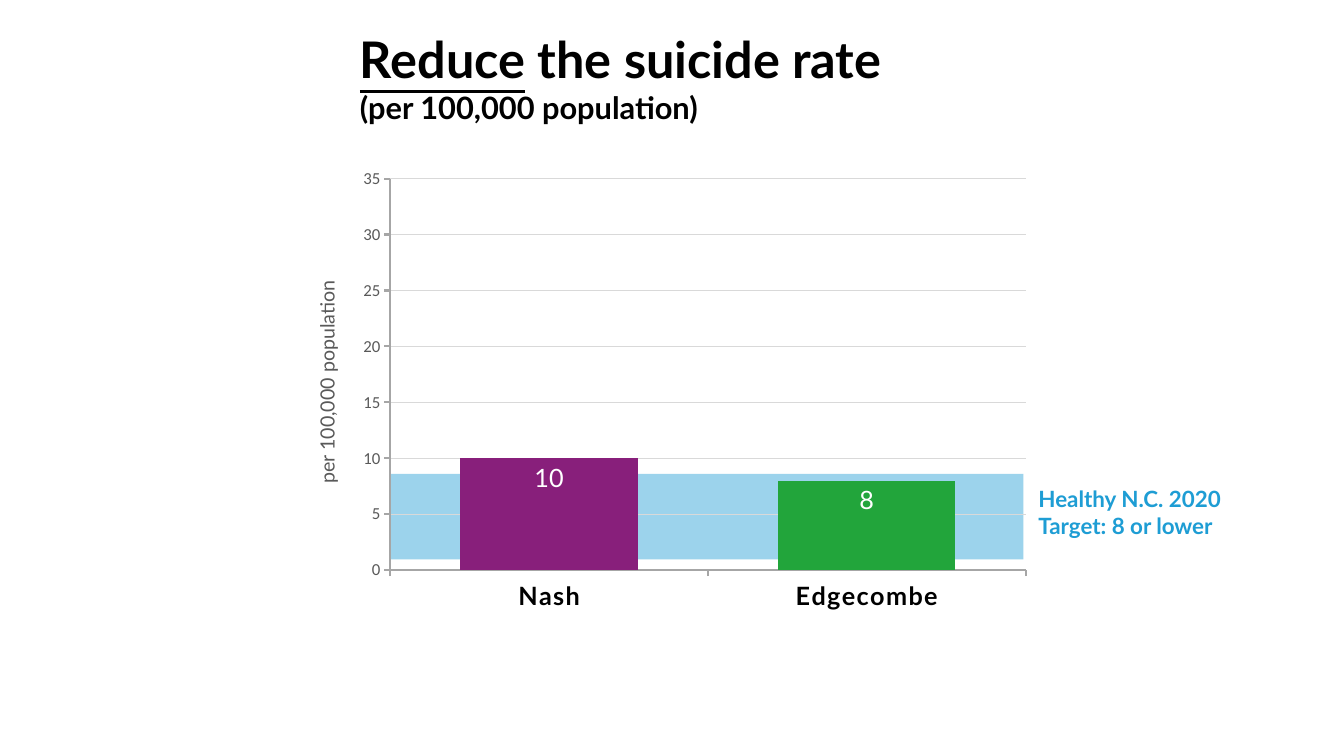
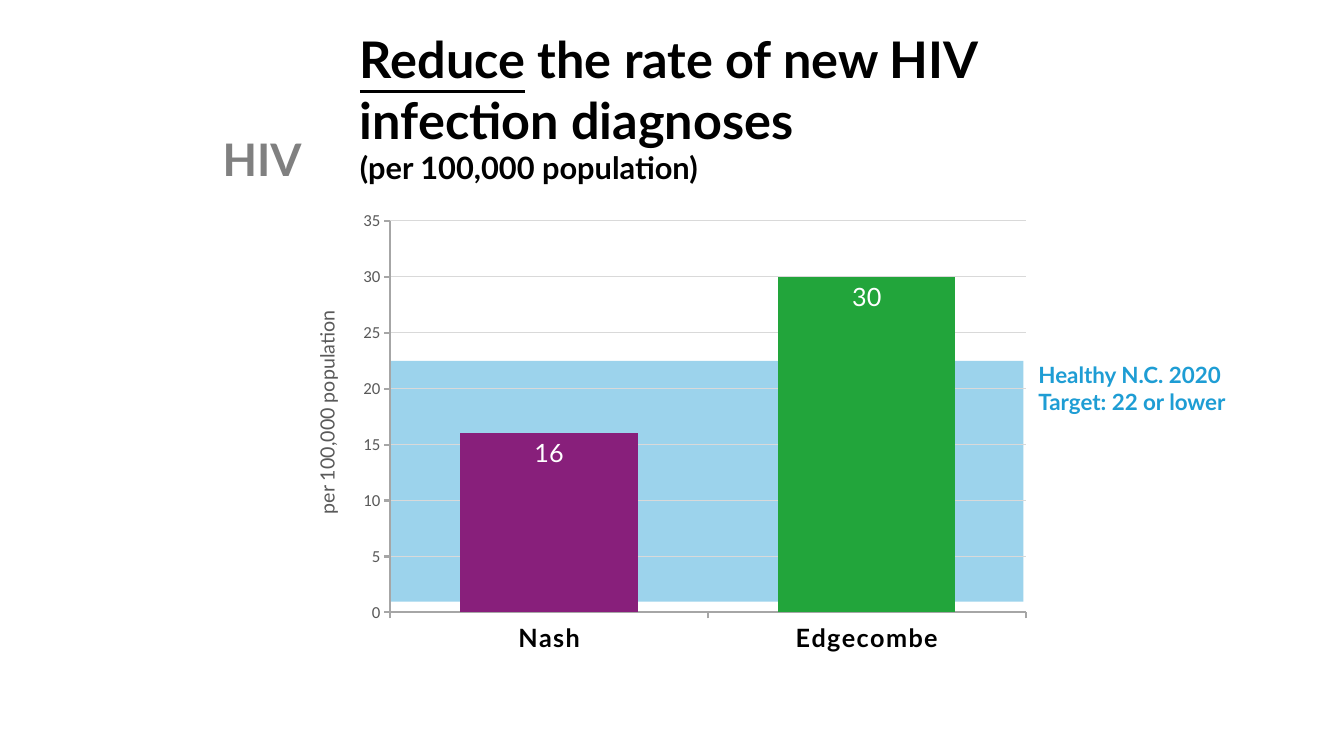
from dataclasses import dataclass

from lxml import etree
from pptx import Presentation
from pptx.chart.axis import CategoryAxis, ValueAxis
from pptx.chart.chart import Chart
from pptx.chart.data import CategoryChartData
from pptx.dml.color import RGBColor
from pptx.enum.chart import XL_CHART_TYPE, XL_LABEL_POSITION
from pptx.enum.shapes import MSO_SHAPE
from pptx.enum.text import MSO_ANCHOR, PP_ALIGN
from pptx.oxml import parse_xml
from pptx.oxml.ns import nsdecls, qn
from pptx.slide import Slide
from pptx.text.text import Font, TextFrame
from pptx.util import Emu, Pt

STACKED = XL_CHART_TYPE.COLUMN_STACKED
INSIDE_END = XL_LABEL_POSITION.INSIDE_END
RECTANGLE = MSO_SHAPE.RECTANGLE
TOP = MSO_ANCHOR.TOP
LEFT = PP_ALIGN.LEFT
CENTER = PP_ALIGN.CENTER

TITLE_ONLY = 5
PX_PER_INCH = 100
COUNTIES = ("Nash", "Edgecombe")
UNIT = "per 100,000 population"


def px(length: int) -> Emu:
    return Emu(length * 914400 // PX_PER_INCH)


@dataclass(frozen=True)
class TextStyle:
    size: float
    color: str
    bold: bool = False
    face: str = "Lato"


@dataclass(frozen=True)
class Theme:
    heading: TextStyle = TextStyle(36, "000000", True)
    subheading: TextStyle = TextStyle(22, "000000", True)
    topic: TextStyle = TextStyle(32, "808080", True)
    target: TextStyle = TextStyle(16, "1E9DD4", True)
    unit: TextStyle = TextStyle(14, "595959")
    county: TextStyle = TextStyle(18, "000000", True)
    scale: TextStyle = TextStyle(12, "595959", face="Calibri")
    value: TextStyle = TextStyle(18, "FFFFFF")
    chart: TextStyle = TextStyle(10, "000000", face="Calibri")
    band: str = "1E9DD4"
    band_opacity: int = 44
    axis: str = "A6A6A6"
    grid: str = "D9D9D9"
    bars: tuple[str, ...] = ("881F7B", "22A53B")


@dataclass(frozen=True)
class Box:
    left: int
    top: int
    width: int
    height: int

    def emu(self) -> tuple[Emu, Emu, Emu, Emu]:
        return px(self.left), px(self.top), px(self.width), px(self.height)


@dataclass(frozen=True)
class Indicator:
    goal: tuple[str, ...]
    rates: tuple[int, ...]
    target: str
    title_height: int
    chart_top: int
    band_height: int
    target_top: int
    unit_top: int
    topic: str = ""


THEME = Theme()
INDICATORS = (
    Indicator((" the suicide rate",), (10, 8), "8 or lower", 108, 159, 85, 481, 362),
    Indicator((" the rate of new HIV", "infection diagnoses"), (16, 30), "22 or lower",
              168, 201, 239, 358, 392, "HIV"),
)


def apply_style(font: Font, style: TextStyle) -> None:
    font.name = style.face
    font.size = Pt(style.size)
    font.bold = style.bold
    font.color.rgb = RGBColor.from_string(style.color)


def add_title(slide: Slide, indicator: Indicator) -> None:
    title = slide.shapes.title
    title.left, title.top, title.width, title.height = Box(
        347, 23, 690, indicator.title_height).emu()
    frame = title.text_frame
    frame.word_wrap = True
    frame.vertical_anchor = TOP
    lines = (*indicator.goal, f"({UNIT})")
    for index, line in enumerate(lines):
        paragraph = frame.paragraphs[0] if index == 0 else frame.add_paragraph()
        paragraph.alignment = LEFT
        apply_style(paragraph.font, THEME.subheading if index == len(lines) - 1 else THEME.heading)
        if index == 0:
            verb = paragraph.add_run()
            verb.text = "Reduce"
            verb.font.underline = True
        paragraph.add_run().text = line


def add_label(slide: Slide, box: Box, text: str, style: TextStyle,
              align: PP_ALIGN = LEFT, rotation: int = 0) -> TextFrame:
    label = slide.shapes.add_textbox(*box.emu())
    label.rotation = rotation
    frame = label.text_frame
    frame.word_wrap = True
    paragraph = frame.paragraphs[0]
    paragraph.text = text
    paragraph.alignment = align
    apply_style(paragraph.font, style)
    return frame


def add_target_band(slide: Slide, indicator: Indicator) -> None:
    bottom = indicator.chart_top + 396
    box = Box(387, bottom - indicator.band_height, 628, indicator.band_height)
    band = slide.shapes.add_shape(RECTANGLE, *box.emu())
    band.shadow.inherit = False
    band.line.fill.background()
    band.fill.solid()
    band.fill.fore_color.rgb = RGBColor.from_string(THEME.band)
    color = band.fill._xPr.find(".//" + qn("a:srgbClr"))
    etree.SubElement(color, qn("a:alpha")).set("val", str(THEME.band_opacity * 1000))


def style_axis(axis: CategoryAxis | ValueAxis, style: TextStyle) -> None:
    apply_style(axis.tick_labels.font, style)
    axis.format.line.color.rgb = RGBColor.from_string(THEME.axis)
    axis.format.line.width = Pt(1.5)


def set_plot_layout(chart: Chart) -> None:
    plot_area = chart.element.find(".//" + qn("c:plotArea"))
    for layout in plot_area.findall(qn("c:layout")):
        plot_area.remove(layout)
    sides = "".join(f'<c:{side} val="{value}"/>' for side, value in (
        ("layoutTarget", "inner"), ("xMode", "edge"), ("yMode", "edge"),
        ("x", 0.06), ("y", 0.04), ("w", 0.92), ("h", 0.85)))
    plot_area.insert(0, parse_xml(
        f'<c:layout {nsdecls("c")}><c:manualLayout>{sides}</c:manualLayout></c:layout>'))
    clear = f'<c:spPr {nsdecls("c", "a")}><a:noFill/><a:ln><a:noFill/></a:ln></c:spPr>'
    plot_area.append(parse_xml(clear))
    chart.element.find(qn("c:chart")).addnext(parse_xml(clear))


def add_rate_chart(slide: Slide, indicator: Indicator) -> None:
    rates = CategoryChartData(number_format="0")
    rates.categories = COUNTIES
    rates.add_series("Series 1", indicator.rates)
    box = Box(346, indicator.chart_top, 685, 457)
    chart = slide.shapes.add_chart(STACKED, *box.emu(), rates).chart
    chart.has_legend = False
    chart.has_title = False
    apply_style(chart.font, THEME.chart)
    set_plot_layout(chart)

    style_axis(chart.category_axis, THEME.county)
    county_text = chart.element.find(f".//{qn('c:catAx')}//{qn('a:defRPr')}")
    county_text.set("spc", "100")
    scale = chart.value_axis
    style_axis(scale, THEME.scale)
    scale.minimum_scale, scale.maximum_scale, scale.major_unit = 0, 35, 5
    grid = scale.major_gridlines.format.line
    grid.color.rgb = RGBColor.from_string(THEME.grid)
    grid.width = Pt(0.75)

    plot = chart.plots[0]
    plot.vary_by_categories = False
    plot.gap_width = 79
    plot.overlap = 100
    plot.has_data_labels = True
    plot.data_labels.show_value = True
    plot.data_labels.position = INSIDE_END
    apply_style(plot.data_labels.font, THEME.value)
    for index, color in enumerate(THEME.bars):
        fill = plot.series[0].points[index].format.fill
        fill.solid()
        fill.fore_color.rgb = RGBColor.from_string(color)


def add_target_note(slide: Slide, indicator: Indicator) -> None:
    frame = add_label(slide, Box(1030, indicator.target_top, 206, 54),
                      f"Healthy N.C. 2020 Target: {indicator.target}", THEME.target)
    frame.margin_left = frame.margin_right = frame.margin_top = frame.margin_bottom = 0


def build_slide(slide: Slide, indicator: Indicator) -> None:
    add_target_band(slide, indicator)
    add_rate_chart(slide, indicator)
    add_target_note(slide, indicator)
    add_title(slide, indicator)
    if indicator.topic:
        add_label(slide, Box(211, 126, 110, 64), indicator.topic, THEME.topic)
    add_label(slide, Box(132, indicator.unit_top, 385, 34), UNIT, THEME.unit, CENTER, 270)


def main() -> None:
    deck = Presentation()
    deck.slide_width, deck.slide_height = px(1333), px(750)
    for indicator in INDICATORS:
        build_slide(deck.slides.add_slide(deck.slide_layouts[TITLE_ONLY]), indicator)
    deck.save("out.pptx")


if __name__ == "__main__":
    main()
